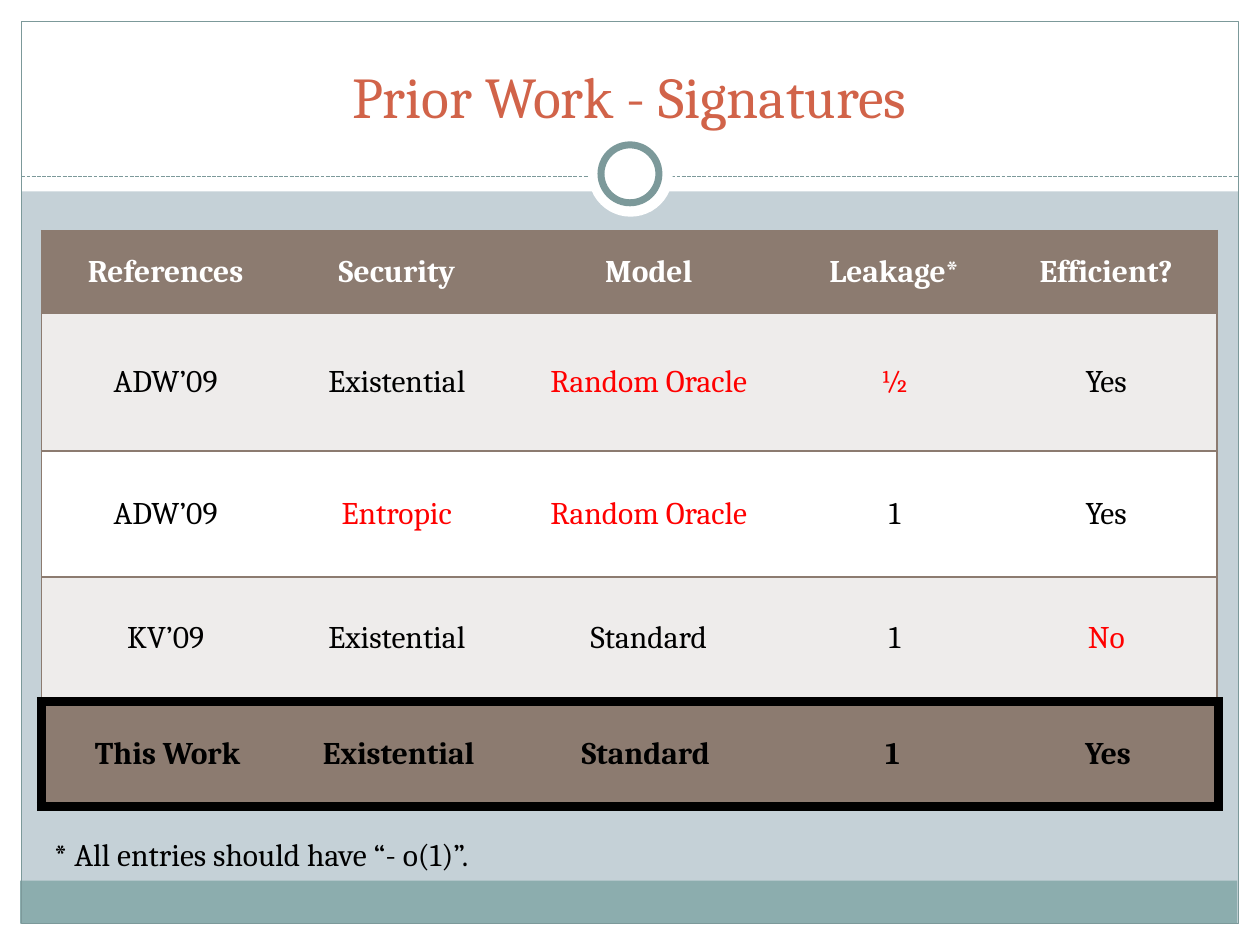
from pptx import Presentation
from pptx import util as u
from pptx.dml.color import RGBColor
from pptx.enum import dml, shapes, text
from pptx.oxml import parse_xml
from pptx.oxml.ns import nsdecls

WHITE = RGBColor(0xFF, 0xFF, 0xFF)
BLACK = RGBColor(0, 0, 0)
RED = RGBColor(0xFF, 0, 0)
RUST = RGBColor(0xD1, 0x63, 0x49)
BROWN = RGBColor(0x8C, 0x7B, 0x70)
PALE = RGBColor(0xEE, 0xEC, 0xEB)
MIST = RGBColor(0xC5, 0xD1, 0xD7)
TEAL = RGBColor(0x8C, 0xAD, 0xAE)
SLATE = RGBColor(0x7C, 0x99, 0x9A)
RECT = shapes.MSO_SHAPE.RECTANGLE
OVAL = shapes.MSO_SHAPE.OVAL

HEAD = ["References", "Security", "Model", "Leakage*", "Efficient?"]
PRIOR = [
    ["ADW’09", "Existential", "Random Oracle", "½", "Yes"],
    ["ADW’09", "Entropic", "Random Oracle", "1", "Yes"],
    ["KV’09", "Existential", "Standard", "1", "No"],
]
OURS = ["This Work", "Existential", "Standard", "1", "Yes"]
WEAK = {"Random Oracle", "½", "Entropic", "No"}


class Deck:
    """Holds the style and the current slide, and draws each kind of element."""

    def __init__(self, font="Cambria", size=18):
        self.font, self.size = font, size
        self.prs = Presentation()
        self.prs.slide_width, self.prs.slide_height = u.Inches(10), u.Inches(7.5)
        self.slide = self.prs.slides.add_slide(self.prs.slide_layouts[5])
        self.shapes = self.slide.shapes
        fill = self.slide.background.fill
        fill.solid()
        fill.fore_color.rgb = MIST

    def style(self, para, color, size=None, bold=False, align=None):
        para.alignment = align
        font = para.font
        font.name, font.size, font.bold = self.font, u.Pt(size or self.size), bold
        font.color.rgb = color

    def shape(self, kind, box, fill=None, line=None, width=0.75):
        item = self.shapes.add_shape(kind, *map(u.Inches, box))
        item.shadow.inherit = False
        if fill is None:
            item.fill.background()
        else:
            item.fill.solid()
            item.fill.fore_color.rgb = fill
        if line is None:
            item.line.fill.background()
        else:
            item.line.color.rgb = line
            item.line.width = u.Pt(width)

    def rule(self, start, end, color):
        item = self.shapes.add_connector(
            shapes.MSO_CONNECTOR.STRAIGHT, *map(u.Inches, start + end))
        item.line.color.rgb = color
        item.line.width = u.Pt(0.75)
        item.line.dash_style = dml.MSO_LINE.SQUARE_DOT
        item._element.spPr.append(parse_xml(f"<a:effectLst {nsdecls('a')}/>"))

    def title(self, words, box):
        item = self.shapes.title
        self.shapes._spTree.append(item._element)
        item.left, item.top, item.width, item.height = map(u.Inches, box)
        frame = item.text_frame
        frame.text = words
        frame.auto_size = text.MSO_AUTO_SIZE.NONE
        frame.vertical_anchor = text.MSO_ANCHOR.BOTTOM
        self.style(frame.paragraphs[0], RUST, 33, align=text.PP_ALIGN.CENTER)

    def note(self, words, box):
        frame = self.shapes.add_textbox(*map(u.Inches, box)).text_frame
        frame.word_wrap = True
        frame.text = words
        self.style(frame.paragraphs[0], BLACK)

    def edge(self, cell, side, color, width):
        paint = "<a:noFill/>"
        if width:
            paint = f'<a:solidFill><a:srgbClr val="{color}"/></a:solidFill>'
        cell._tc.get_or_add_tcPr().append(parse_xml(
            f'<a:ln{side} {nsdecls("a")} w="{u.Pt(width)}">{paint}</a:ln{side}>'))

    def cell(self, cell, words, fill, color, bold):
        cell.text = words
        cell.vertical_anchor = text.MSO_ANCHOR.MIDDLE
        cell.fill.solid()
        cell.fill.fore_color.rgb = fill
        self.style(cell.text_frame.paragraphs[0], color, bold=bold,
                   align=text.PP_ALIGN.CENTER)

    def table(self, spot, cols, highs, rows, looks, line, width):
        size = sum(cols), sum(highs)
        grid = self.shapes.add_table(
            len(rows), len(cols), *map(u.Inches, spot + size)).table
        for col, wide in zip(grid.columns, cols):
            col.width = u.Inches(wide)
        for r, (row, high, look) in enumerate(zip(rows, highs, looks)):
            grid.rows[r].height = u.Inches(high)
            fill, color, bold = look
            for c, words in enumerate(row):
                cell = grid.cell(r, c)
                self.edge(cell, "L", line, 0 if c else width)
                self.edge(cell, "R", line, 0 if c < len(cols) - 1 else width)
                self.edge(cell, "T", line, width)
                self.edge(cell, "B", line, width)
                self.cell(cell, words, fill, RED if words in WEAK else color, bold)


def main():
    deck = Deck()
    for box in ((0, 7.33, 10, 0.17), (0, 0, 10, 1.52),
                (0, 0, 0.17, 7.5), (9.83, 0, 0.17, 7.5)):
        deck.shape(RECT, box, WHITE)
    deck.shape(RECT, (0.16, 6.99, 9.66, 0.34), TEAL)
    deck.shape(RECT, (0.17, 0.17, 9.66, 7.16), line=SLATE)
    deck.rule((0.17, 1.4), (9.83, 1.4), SLATE)
    deck.shape(OVAL, (4.67, 1.05, 0.67, 0.67), WHITE)
    deck.shape(OVAL, (4.77, 1.15, 0.46, 0.46), WHITE, SLATE, 4)

    deck.title("Prior Work - Signatures", (0.33, 0.25, 9.33, 0.83))
    looks = [(BROWN, WHITE, True)]
    looks += [(fill, BLACK, False) for fill in (PALE, WHITE, PALE)]
    deck.table((0.33, 1.83), (1.97, 1.7, 2.3, 1.6, 1.76), (0.66, 1.09, 1, 0.98),
               [HEAD] + PRIOR, looks, BROWN, 1)
    deck.table((0.33, 5.57), (2, 1.67, 2.25, 1.67, 1.75), (0.83,),
               [OURS], [(BROWN, BLACK, True)], BLACK, 6)
    deck.note("* All entries should have “- o(1)”.", (0.33, 6.58, 8.75, 0.4))
    deck.prs.save("out.pptx")


if __name__ == "__main__":
    main()
